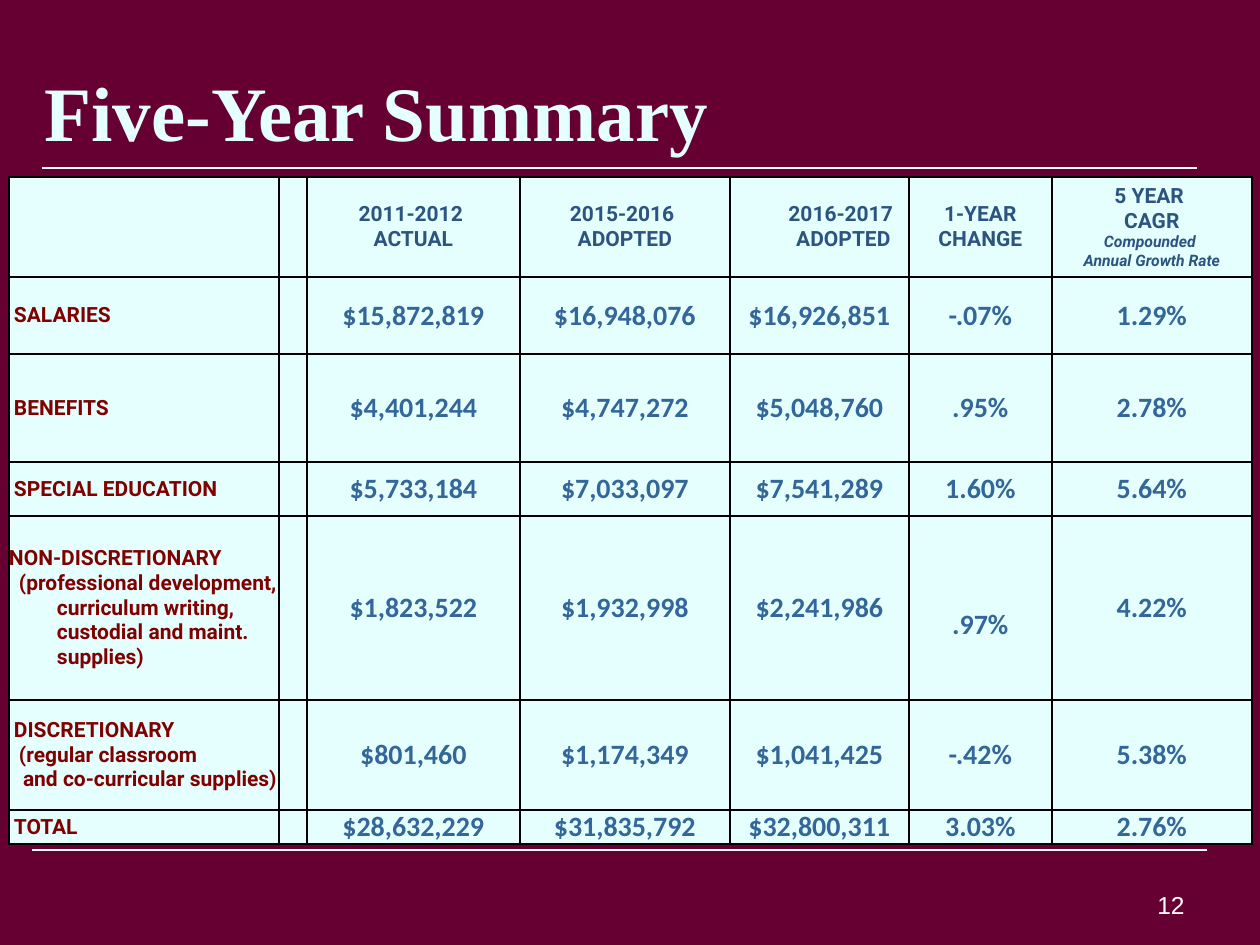
from lxml import etree
from pptx import Presentation
from pptx.dml.color import RGBColor
from pptx.enum.shapes import MSO_CONNECTOR
from pptx.enum.text import MSO_ANCHOR, MSO_AUTO_SIZE, PP_ALIGN
from pptx.oxml.ns import qn
from pptx.util import Pt

LEFT, CENTER, RIGHT = PP_ALIGN.LEFT, PP_ALIGN.CENTER, PP_ALIGN.RIGHT
MIDDLE, BOTTOM = MSO_ANCHOR.MIDDLE, MSO_ANCHOR.BOTTOM
STRAIGHT, NO_FIT = MSO_CONNECTOR.STRAIGHT, MSO_AUTO_SIZE.NONE
EMU_PER_PX = 914400 / 126

TITLE = "Five-Year Summary"
PAGE_NUMBER = "12"
HEADERS = [
    [],
    [],
    ["2011-2012 ", "ACTUAL"],
    ["2015-2016 ", "ADOPTED"],
    ["2016-2017 ", "ADOPTED"],
    ["1-YEAR", "CHANGE"],
    ["5 YEAR ", "CAGR", "Compounded ", "Annual Growth Rate"],
]
ROWS = [
    ([("SALARIES", 5)],
     ["$15,872,819", "$16,948,076", "$16,926,851", "-.07%", "1.29%"]),
    ([("BENEFITS", 5)],
     ["$4,401,244", "$4,747,272", "$5,048,760", ".95%", "2.78%"]),
    ([("SPECIAL EDUCATION", 5)],
     ["$5,733,184", "$7,033,097", "$7,541,289", "1.60%", "5.64%"]),
    ([("NON-DISCRETIONARY", 0),
      ("(professional development, curriculum writing, custodial and maint. supplies)", 10)],
     ["$1,823,522", "$1,932,998", "$2,241,986", ".97%", "4.22%"]),
    ([("DISCRETIONARY", 5), ("(regular classroom", 10), ("and co-curricular supplies)", 14)],
     ["$801,460", "$1,174,349", "$1,041,425", "-.42%", "5.38%"]),
    ([("TOTAL", 5)],
     ["$28,632,229", "$31,835,792", "$32,800,311", "3.03%", "2.76%"]),
]
COLUMN_WIDTHS = [270, 28, 213, 210, 179, 143, 200]
ROW_HEIGHTS = [100, 77, 108, 54, 184, 110, 34]
RULES = [(42, 1197, 168), (32, 1207, 850)]
HANGING = 48
INDENTED_HEADER = 4
LOWERED_CELL, LOWERED_BY = (4, 5), 34

TITLE_FONT = {"name": "Times New Roman", "size": Pt(44), "bold": True, "color": "E5FFFF"}
NUMBER_FONT = {"name": "Arial", "size": Pt(14), "color": "FFFFFF"}
HEADER_FONT = {"name": "Roboto", "size": Pt(12), "bold": True, "color": "2B5481"}
NOTE_FONT = {**HEADER_FONT, "size": Pt(9), "italic": True}
LABEL_FONT = {**HEADER_FONT, "color": "800000"}
VALUE_FONT = {"name": "Calibri", "size": Pt(16), "bold": True, "color": "336699"}


def px(length):
    return round(length * EMU_PER_PX)


def paint(target, color):
    target.solid()
    target.fore_color.rgb = RGBColor.from_string(color)


def write(para, text, style, align=LEFT):
    para.alignment = align
    span = para.add_run()
    span.text = text
    for name, value in style.items():
        if name == "color":
            paint(span.font.fill, value)
        else:
            setattr(span.font, name, value)


def indent(para, margin, first):
    properties = para._p.get_or_add_pPr()
    properties.set("marL", str(px(margin)))
    properties.set("indent", str(px(first - margin)))


def paragraphs(frame, count):
    return [frame.paragraphs[0]] + [frame.add_paragraph() for _ in range(count - 1)]


def add_rule(page, left, right, top):
    rule = page.shapes.add_connector(STRAIGHT, px(left), px(top), px(right), px(top))
    rule.line.width = Pt(0.75)
    paint(rule.line.fill, "FFFFFF")
    etree.SubElement(rule._element.spPr, qn("a:effectLst"))


def format_cell(cell):
    for side in ("left", "right", "top", "bottom"):
        setattr(cell, "margin_" + side, 0)
    cell.vertical_anchor = MIDDLE
    properties = cell._tc.get_or_add_tcPr()
    for edge in ("a:lnL", "a:lnR", "a:lnT", "a:lnB"):
        border = etree.SubElement(properties, qn(edge), w=str(Pt(1)))
        fill = etree.SubElement(border, qn("a:solidFill"))
        etree.SubElement(fill, qn("a:srgbClr"), val="000000")
    paint(cell.fill, "E5FFFF")


def fill_header(cell, lines, margin, first):
    for number, para in enumerate(paragraphs(cell.text_frame, len(lines))):
        write(para, lines[number], HEADER_FONT if number < 2 else NOTE_FONT, CENTER)
        indent(para, margin, first)


def fill_label(cell, lines):
    for (text, first), para in zip(lines, paragraphs(cell.text_frame, len(lines))):
        write(para, text, LABEL_FONT)
        indent(para, HANGING, first)


def add_summary(page):
    frame = page.shapes.add_table(
        len(ROW_HEIGHTS), len(COLUMN_WIDTHS), px(9), px(177),
        px(sum(COLUMN_WIDTHS)), px(sum(ROW_HEIGHTS)))
    table = frame.table
    for column, width in zip(table.columns, COLUMN_WIDTHS):
        column.width = px(width)
    for row, height in zip(table.rows, ROW_HEIGHTS):
        row.height = px(height)
    for cell in table.iter_cells():
        format_cell(cell)
    for column, lines in enumerate(HEADERS):
        if lines:
            first = HANGING if column == INDENTED_HEADER else 0
            fill_header(table.cell(0, column), lines, HANGING, first)
    for row, (label, values) in enumerate(ROWS, 1):
        fill_label(table.cell(row, 0), label)
        for column, value in enumerate(values, 2):
            para = table.cell(row, column).text_frame.paragraphs[0]
            write(para, value, VALUE_FONT, CENTER)
    table.cell(*LOWERED_CELL).margin_top = px(LOWERED_BY)
    for cell in table.iter_cells():
        if not cell.text:
            para = cell.text_frame.paragraphs[0]
            etree.SubElement(para._p, qn("a:endParaRPr"), sz="1200")


def main():
    deck = Presentation()
    deck.slide_width, deck.slide_height = px(1260), px(945)
    page = deck.slides.add_slide(deck.slide_layouts[5])
    paint(page.background.fill, "660033")

    title = page.shapes.title
    title.left, title.top, title.width, title.height = px(32), px(32), px(1134), px(158)
    title.text_frame.auto_size = NO_FIT
    title.text_frame.vertical_anchor = MIDDLE
    write(title.text_frame.paragraphs[0], TITLE, TITLE_FONT)

    for rule in RULES:
        add_rule(page, *rule)
    add_summary(page)

    box = page.shapes.add_textbox(px(903), px(861), px(294), px(65))
    box.text_frame.word_wrap = True
    box.text_frame.vertical_anchor = BOTTOM
    write(box.text_frame.paragraphs[0], PAGE_NUMBER, NUMBER_FONT, RIGHT)
    deck.save("out.pptx")


if __name__ == "__main__":
    main()
